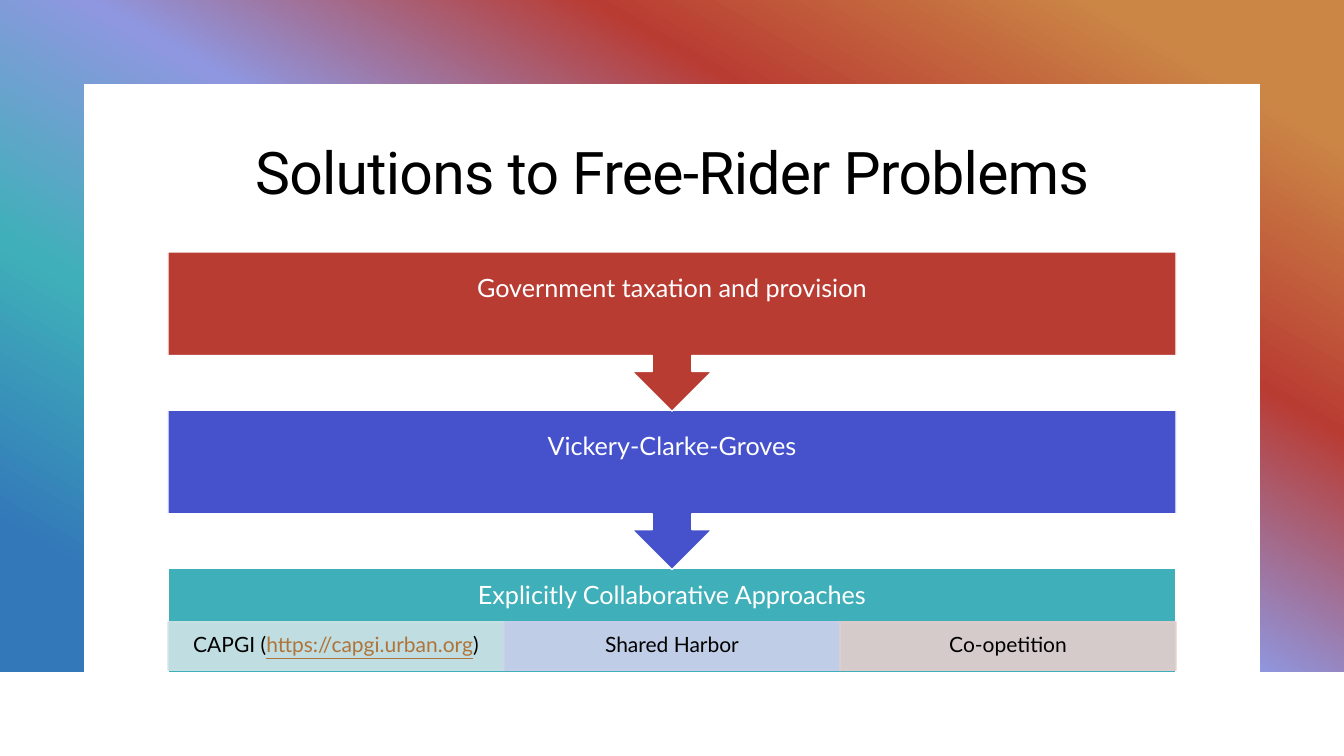
from pptx import Presentation, util as u
from pptx.dml.color import RGBColor
from pptx.enum import shapes, text
from pptx.oxml import parse_xml
from pptx.oxml.ns import nsdecls, qn
from lxml import etree

WHITE = RGBColor(0xFF, 0xFF, 0xFF)
BLACK = RGBColor(0, 0, 0)
RED = RGBColor(0xB9, 0x3C, 0x33)
BLUE = RGBColor(0x45, 0x52, 0xCB)
TEAL = RGBColor(0x3F, 0xB0, 0xB9)
LINK = RGBColor(0xB0, 0x74, 0x3A)
ORANGE = RGBColor(0xCB, 0x86, 0x45)
LILAC = RGBColor(0x8F, 0x97, 0xE0)
DEEP = RGBColor(0x33, 0x78, 0xB9)
MINT = RGBColor(0xCF, 0xE4, 0xE6)
PALE = RGBColor(0xCF, 0xD1, 0xEC)
PINK = RGBColor(0xE6, 0xCE, 0xCE)

deck = Presentation()
deck.slide_width, deck.slide_height = u.Inches(13.333), u.Inches(7.5)
slide = deck.slides.add_slide(deck.slide_layouts[5])

# Grid: 16 columns by 9 rows of square units
UNIT = 7.5 / 9
LEFT, WIDE = 2 * UNIT, 12 * UNIT
RECT = shapes.MSO_SHAPE.RECTANGLE


def block(kind, x, y, w, h, fill, line=None):
    shape = slide.shapes.add_shape(kind, *map(u.Inches, (x, y, w, h)))
    shape.shadow.inherit = False
    shape.fill.solid()
    shape.fill.fore_color.rgb = fill
    if line is None:
        shape.line.fill.background()
    else:
        shape.line.color.rgb = line
        shape.line.width = u.Pt(1)
    return shape


def label(x, y, w, h, size, runs):
    frame = slide.shapes.add_textbox(*map(u.Inches, (x, y, w, h))).text_frame
    frame.word_wrap = True
    frame.vertical_anchor = text.MSO_ANCHOR.MIDDLE
    frame.margin_top = frame.margin_bottom = u.Inches(0.02)
    para = frame.paragraphs[0]
    para.alignment = text.PP_ALIGN.CENTER
    para.line_spacing = 0.9
    for words, color in runs:
        run = para.add_run()
        run.text = words
        run.font.name, run.font.size = "Lato", u.Pt(size)
        run.font.color.rgb = color
        run.font.underline = color == LINK


# Gradient backdrop and white panel
back = block(RECT, 0, 0, 16 * UNIT, 8 * UNIT, WHITE)
stops = "".join(
    f'<a:gs pos="{pos * 1000}"><a:srgbClr val="{color}"/></a:gs>'
    for pos, color in zip(range(10, 100, 20), (ORANGE, RED, LILAC, TEAL, DEEP)))
props = back.fill._xPr
props.replace(props.find(qn("a:solidFill")), parse_xml(
    f'<a:gradFill rotWithShape="1" {nsdecls("a")}><a:gsLst>{stops}</a:gsLst>'
    f'<a:lin ang="{120 * 60000}" scaled="0"/></a:gradFill>'))
panel = block(RECT, UNIT, UNIT, 14 * UNIT, 7 * UNIT, WHITE)

# Title, brought in front of the panel
title = slide.shapes.title
title.left, title.top = u.Inches(LEFT), u.Inches(1.23)
title.width, title.height = u.Inches(WIDE), u.Inches(1.01)
panel._element.addnext(title._element)
title.text_frame.vertical_anchor = text.MSO_ANCHOR.MIDDLE
para = title.text_frame.paragraphs[0]
para.alignment = text.PP_ALIGN.CENTER
para.line_spacing = 0.95
run = para.add_run()
run.text = "Solutions to Free-Rider Problems"
run.font.name, run.font.size = "Roboto", u.Pt(42)
run.font.color.rgb = BLACK
run.font._element.set("spc", "-50")

# Last step with its three examples
TOP, STEP = 2.5, 1.57
base = TOP + 2 * STEP
block(RECT, LEFT, base, WIDE, 1.03, TEAL, WHITE)
label(LEFT, base, WIDE, 0.56, 18, [("Explicitly Collaborative Approaches", WHITE)])
cells = [
    (MINT, [("CAPGI (", BLACK), ("https://capgi.urban.org", LINK), (")", BLACK)]),
    (PALE, [("Shared Harbor", BLACK)]),
    (PINK, [("Co-opetition", BLACK)]),
]
third = WIDE / 3
for col, (tint, runs) in enumerate(cells):
    spot = (LEFT + col * third, base + 0.53, third, 0.48)
    cell = block(RECT, *spot, tint, tint)
    for color in cell._element.spPr.iter(qn("a:srgbClr")):
        etree.SubElement(color, qn("a:alpha")).set("val", "90000")
    label(*spot, 15, runs)

# Steps that point down, the upper one in front
steps = [("Government taxation and provision", RED), ("Vickery-Clarke-Groves", BLUE)]
for row, (words, color) in reversed(list(enumerate(steps))):
    y = TOP + row * STEP
    step = block(shapes.MSO_SHAPE.UP_ARROW_CALLOUT, LEFT, y, WIDE, 1.58, color, WHITE)
    step.rotation = 180
    label(LEFT, y, WIDE, 0.74, 18, [(words, WHITE)])

deck.save("out.pptx")
